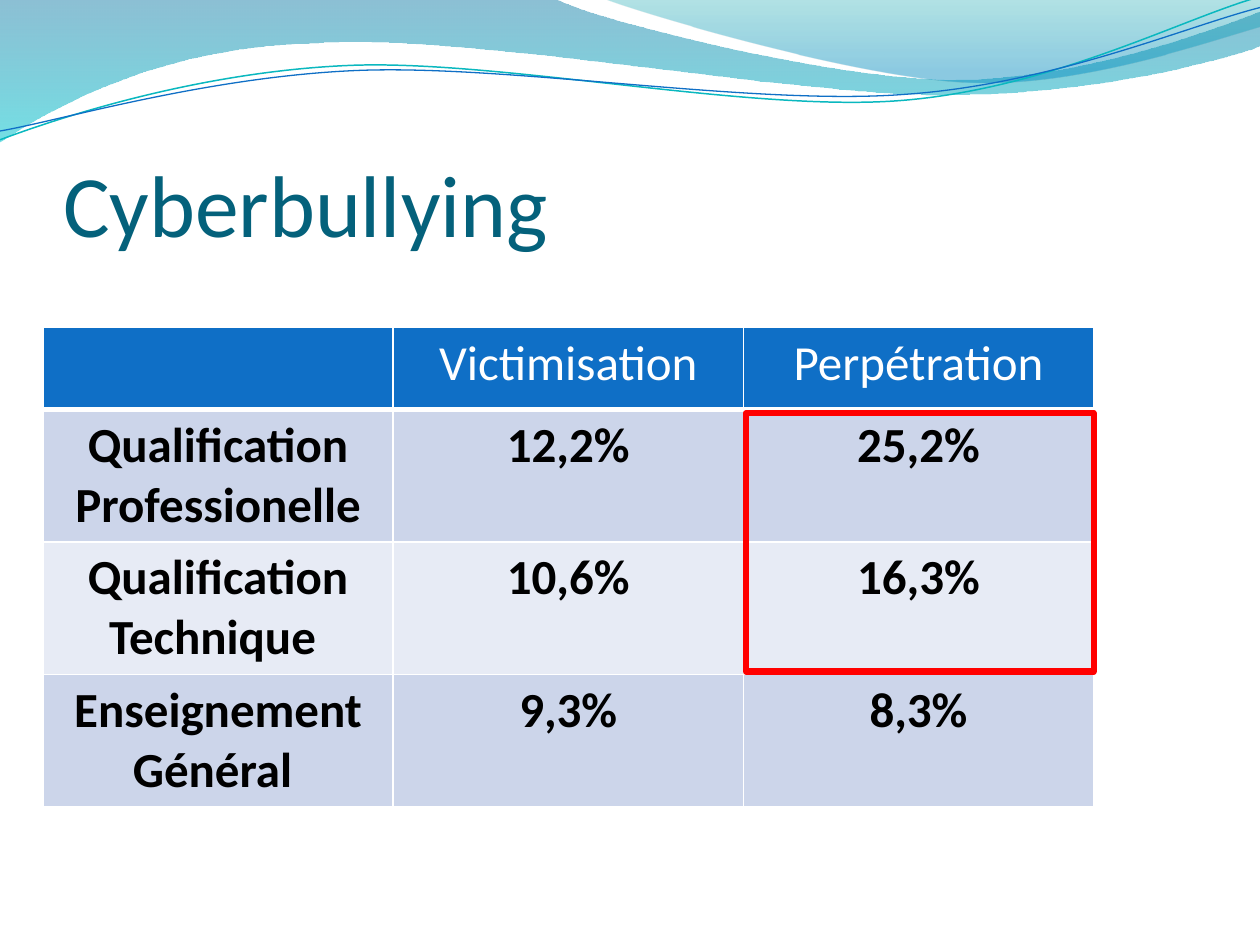
from lxml.etree import SubElement
from pptx import Presentation
from pptx.dml.color import RGBColor
from pptx.enum.shapes import MSO_SHAPE
from pptx.enum.text import MSO_ANCHOR, MSO_AUTO_SIZE, PP_ALIGN
from pptx.oxml.ns import qn
from pptx.util import Inches, Pt

WHITE = RGBColor(0xFF, 0xFF, 0xFF)
BLACK = RGBColor(0x00, 0x00, 0x00)
RED = RGBColor(0xFF, 0x00, 0x00)
BLUE = RGBColor(0x0F, 0x6F, 0xC6)
TEAL = RGBColor(0x0A, 0xB8, 0xBF)
TITLE_TEAL = RGBColor(0x04, 0x61, 0x7B)
BAND_DARK = RGBColor(0xCC, 0xD5, 0xEA)
BAND_LIGHT = RGBColor(0xE7, 0xEB, 0xF5)
WAVE_BLUE = RGBColor(0x00, 0x74, 0xA1)
WAVE_CYAN = RGBColor(0x00, 0xC6, 0xCF)
CREST_GREEN = RGBColor(0x00, 0xA1, 0xA9)
CREST_BLUE = RGBColor(0x00, 0x8B, 0xBF)

# Outlines in inches: a pair is a straight step, six numbers a Bézier curve
WAVE = [
    (0, 0), (4.4, -0.01),
    (4.76, 0.17, 6.64, 0.63, 7.58, 0.63), (8.53, 0.63, 9.58, 0.26, 10, 0.09),
    (10.01, 0.36),
    (9.83, 0.44, 8.7, 0.76, 7.46, 0.75), (6.22, 0.75, 3.82, 0.28, 2.57, 0.34),
    (1.29, 0.36, 0.46, 0.83, -0.01, 1.13), (0, 0),
]
CREST = [
    (4.79, -0.01),
    (5.09, 0.11, 6.82, 0.62, 7.69, 0.65), (8.56, 0.69, 9.61, 0.32, 10, 0.21),
    (10, 0), (4.79, -0.01),
]
TEAL_CURVE = [
    (0, 1.11),
    (0.48, 0.93, 1.58, 0.57, 2.77, 0.52), (3.95, 0.47, 5.93, 0.89, 7.13, 0.8),
    (8.33, 0.71, 9.38, 0.15, 9.98, -0.02),
]
BLUE_CURVE = [
    (0, 1.04),
    (0.47, 0.96, 1.64, 0.61, 2.83, 0.56), (4.03, 0.51, 5.97, 0.84, 7.17, 0.75),
    (8.36, 0.67, 9.41, 0.21, 10, 0.06),
]

ROWS = [
    ("", "Victimisation", "Perpétration"),
    ("Qualification Professionelle", "12,2%", "25,2%"),
    ("Qualification Technique ", "10,6%", "16,3%"),
    ("Enseignement Général ", "9,3%", "8,3%"),
]


class SlideBuilder:
    font = "Calibri"

    def __init__(self, page):
        self.page = page

    def style(self, para, size, color, bold=False):
        para.font.name = self.font
        para.font.size = Pt(size)
        para.font.color.rgb = color
        para.font.bold = bold

    def outline(self, steps, closed):
        """Build a freeform, then join each curve's three points into one Bézier."""
        points = [(Inches(x), Inches(y))
                  for step in steps for x, y in zip(step[::2], step[1::2])]
        builder = self.page.shapes.build_freeform(*points[0], scale=1.0)
        builder.add_line_segments(points[1:], close=closed)
        shape = builder.convert_to_shape()
        shape.shadow.inherit = False
        lines = iter(list(shape._element.iter(qn("a:lnTo"))))
        for step in steps[1:]:
            line = next(lines)
            if len(step) == 6:
                line.tag = qn("a:cubicBezTo")
                for _ in range(2):
                    following = next(lines)
                    line.append(following[0])
                    following.getparent().remove(following)
        return shape

    def wave(self, steps, stops):
        """Closed shape with a top-to-bottom gradient of (position, colour, opacity %)."""
        shape = self.outline(steps, closed=True)
        shape.line.fill.background()
        shape.fill.gradient()
        shape.fill.gradient_angle = 270
        for stop, (position, color, _) in zip(shape.fill.gradient_stops, stops):
            stop.position = position
            stop.color.rgb = color
        colors = shape._element.spPr.iter(qn("a:srgbClr"))
        for node, (_, _, opacity) in zip(colors, stops):
            SubElement(node, qn("a:alpha"), val=str(opacity * 1000))

    def curve(self, steps, color, width):
        shape = self.outline(steps, closed=False)
        shape.fill.background()
        shape.line.color.rgb = color
        shape.line.width = Pt(width)

    def title(self, text, left, top, width, height):
        box = self.page.shapes.title
        box.left, box.top, box.width, box.height = map(Inches, (left, top, width, height))
        frame = box.text_frame
        frame.text = text
        frame.auto_size = MSO_AUTO_SIZE.NONE
        frame.vertical_anchor = MSO_ANCHOR.BOTTOM
        frame.margin_left = frame.margin_right = frame.margin_bottom = 0
        frame.margin_top = Inches(0.05)
        para = frame.paragraphs[0]
        para.alignment = PP_ALIGN.LEFT
        para.line_spacing = 0.8
        self.style(para, 50, TITLE_TEAL)
        self.page.shapes._spTree.append(box._element)  # in front of the waves

    def header_borders(self, cell):
        properties = cell._tc.get_or_add_tcPr()
        for side, width in (("L", 1), ("R", 1), ("T", 1), ("B", 3)):
            line = SubElement(properties, qn(f"a:ln{side}"), w=str(Pt(width)))
            fill = SubElement(line, qn("a:solidFill"))
            SubElement(fill, qn("a:srgbClr"), val=str(WHITE))

    def table(self, rows, left, top, width, height, row_height):
        """Rows grow from row_height to hold their text."""
        frame = self.page.shapes.add_table(
            len(rows), len(rows[0]), *map(Inches, (left, top, width, height)))
        table = frame.table
        for row in table.rows:
            row.height = Inches(row_height)
        frame.height = Inches(height)
        for r, texts in enumerate(rows):
            header = r == 0
            band = BLUE if header else (BAND_LIGHT, BAND_DARK)[r % 2]
            for c, text in enumerate(texts):
                cell = table.cell(r, c)
                if header:
                    self.header_borders(cell)
                cell.fill.solid()
                cell.fill.fore_color.rgb = band
                cell.text = text
                para = cell.text_frame.paragraphs[0]
                para.alignment = PP_ALIGN.CENTER
                self.style(para, 28, WHITE if header else BLACK, bold=not header)

    def highlight(self, left, top, width, height):
        box = self.page.shapes.add_shape(
            MSO_SHAPE.RECTANGLE, *map(Inches, (left, top, width, height)))
        box.shadow.inherit = False
        box.fill.background()
        box.line.color.rgb = RED
        box.line.width = Pt(3.5)


def main():
    deck = Presentation()
    deck.slide_width, deck.slide_height = Inches(10), Inches(7.5)
    slide = SlideBuilder(deck.slides.add_slide(deck.slide_layouts[5]))

    # Wave decoration
    slide.wave(WAVE, [(0, WAVE_BLUE, 45), (1, WAVE_CYAN, 55)])
    slide.wave(CREST, [(0, CREST_GREEN, 30), (0.8, CREST_BLUE, 45)])
    slide.curve(TEAL_CURVE, TEAL, 0.85)
    slide.curve(BLUE_CURVE, BLUE, 0.75)

    # Title, results and the highlighted rates
    slide.title("Cyberbullying", 0.5, 0.77, 9, 1.25)
    slide.table(ROWS, 0.34, 2.6, 8.34, 3.75, row_height=0.65)
    slide.highlight(5.92, 3.28, 2.76, 2.05)

    deck.save("out.pptx")


if __name__ == "__main__":
    main()
